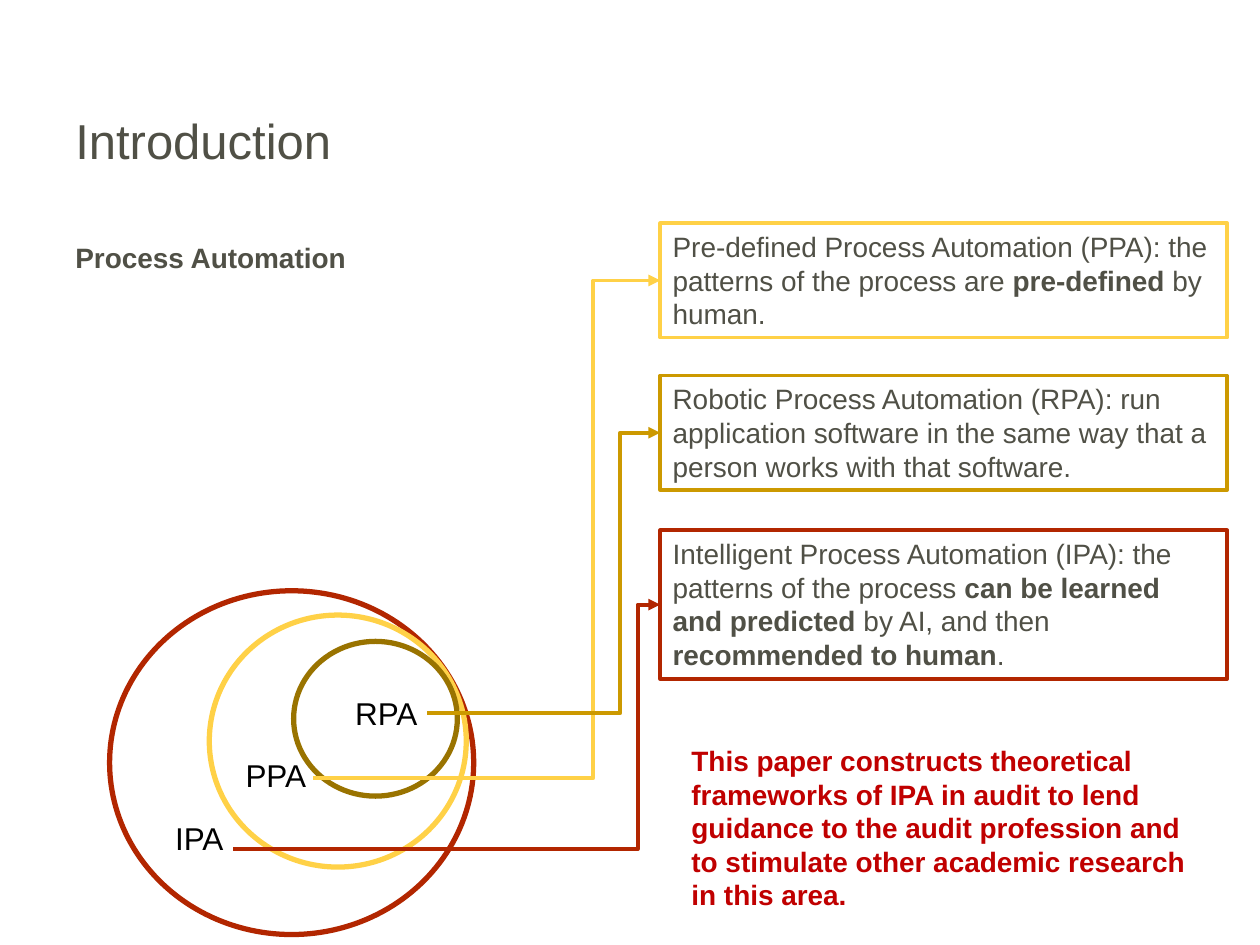
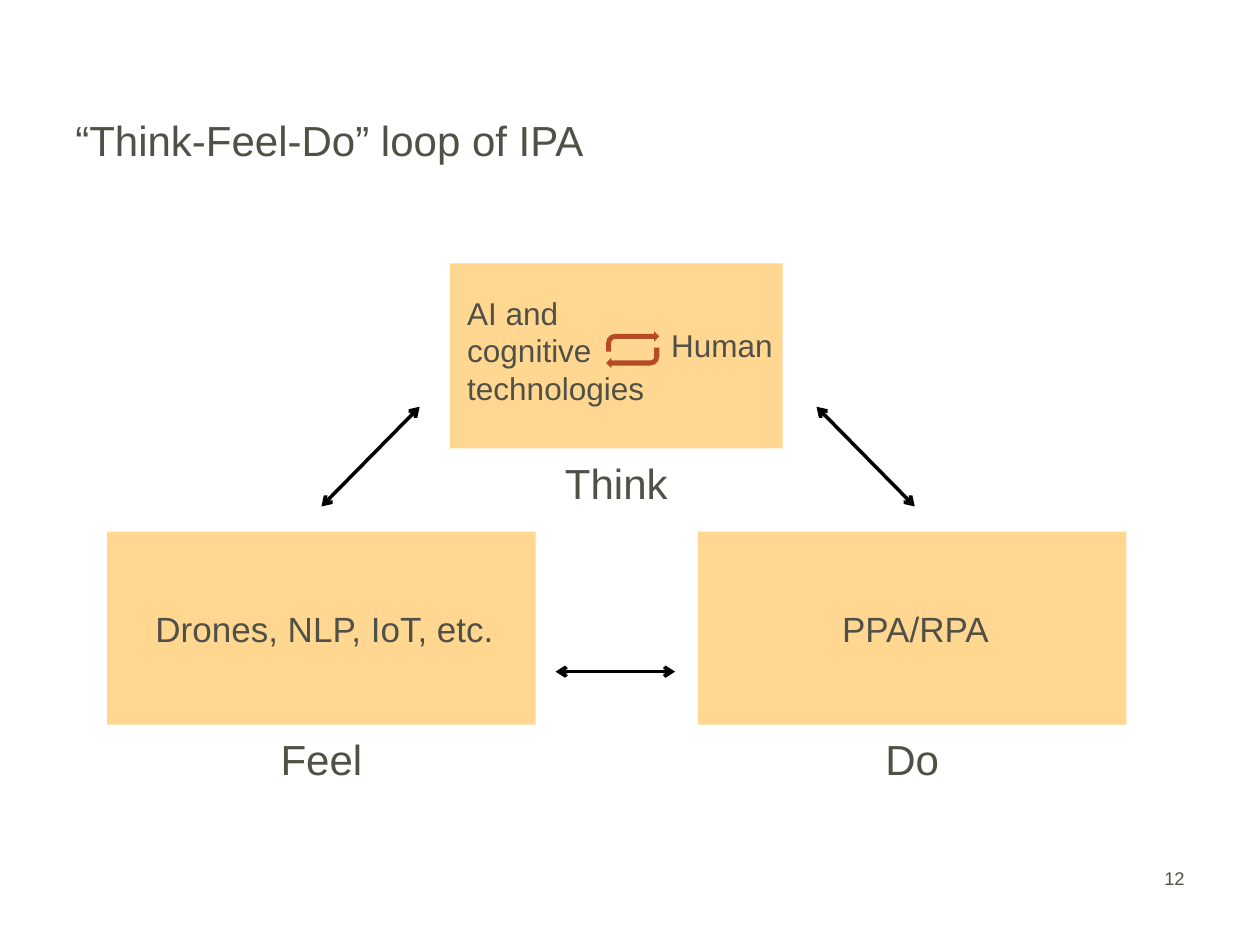
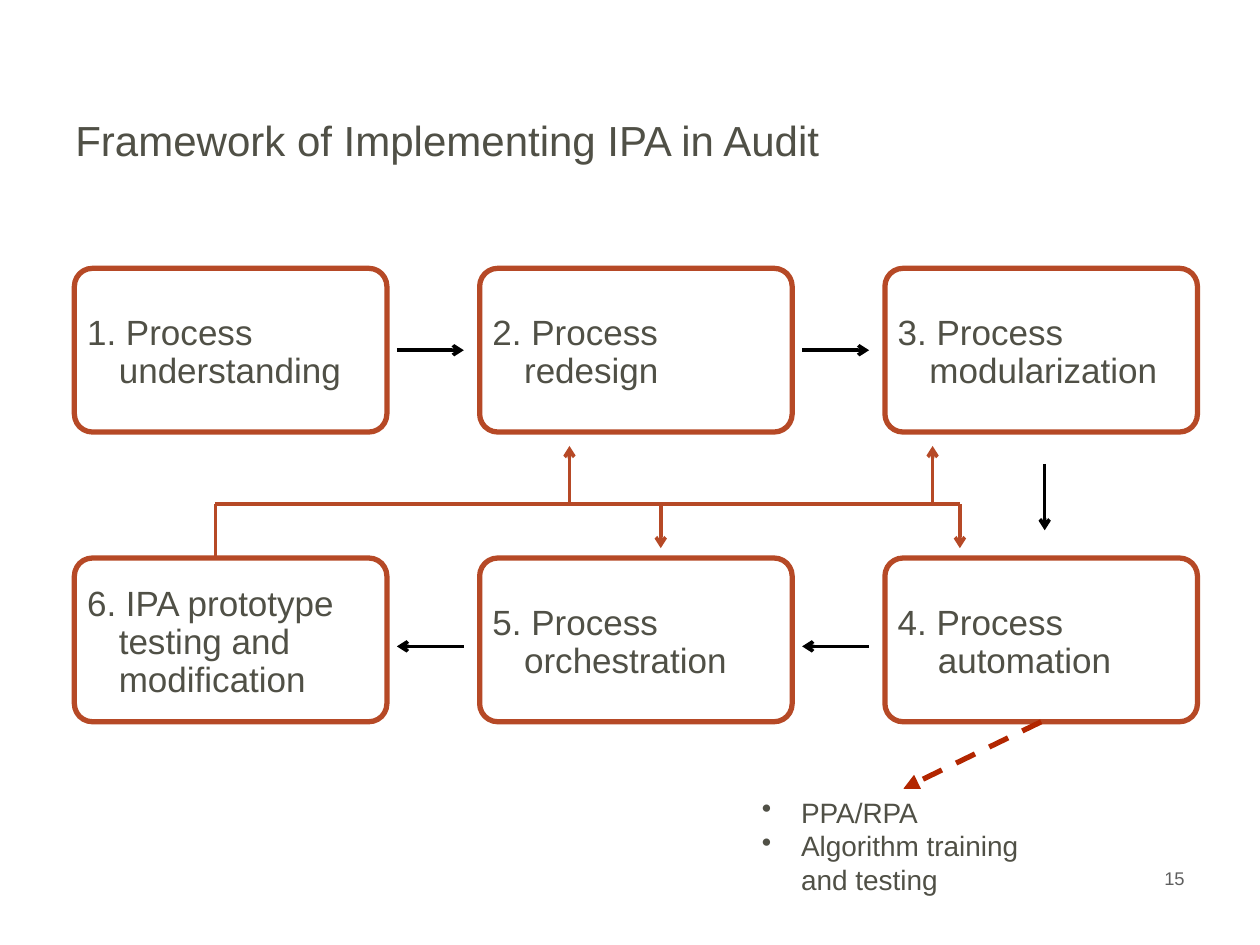
from dataclasses import dataclass

import pptx
import pptx.dml.color
import pptx.enum.dml
import pptx.enum.shapes
import pptx.enum.text
import pptx.oxml.ns
import pptx.util
from lxml import etree
from pptx.util import Cm

SHAPE = pptx.enum.shapes.MSO_SHAPE
CONNECTOR = pptx.enum.shapes.MSO_CONNECTOR
ALIGN = pptx.enum.text.PP_ALIGN
ANCHOR = pptx.enum.text.MSO_ANCHOR
qn = pptx.oxml.ns.qn


@dataclass(frozen=True)
class Theme:
    font: str = "Arial"
    ink: str = "505046"
    muted: str = "5F5F5F"
    black: str = "000000"
    white: str = "FFFFFF"
    yellow: str = "FFD147"
    gold: str = "CC9900"
    bronze: str = "997300"
    red: str = "B22600"
    alert: str = "C00000"
    sand: str = "FFD791"
    rust: str = "B64926"
    title_large: float = 28
    title: float = 24
    step: float = 20
    label: float = 18
    body: float = 16
    number: float = 10.5


THEME = Theme()


def rgb(color):
    return pptx.dml.color.RGBColor.from_string(color)


def write(box, text, size=THEME.body, color=THEME.ink, bold=False, align=ALIGN.LEFT,
          anchor=ANCHOR.TOP, insets=(0.25, 0.13, 0.25, 0.13), hanging=0, bullet="",
          spacing=None):
    """Fill box with one paragraph per line; **marks** switch bold on and off."""
    frame = box.text_frame
    frame.word_wrap = True
    frame.vertical_anchor = anchor
    (frame.margin_left, frame.margin_top,
     frame.margin_right, frame.margin_bottom) = map(Cm, insets)
    for index, line in enumerate(text.split("\n")):
        para = frame.paragraphs[0] if index == 0 else frame.add_paragraph()
        para.alignment = align
        if spacing:
            para.line_spacing = spacing
        properties = para._p.get_or_add_pPr()
        if hanging:
            properties.set("marL", str(Cm(hanging)))
            properties.set("indent", str(-Cm(hanging)))
        if bullet:
            etree.SubElement(properties, qn("a:buChar"), char=bullet)
        for part, words in enumerate(line.split("**")):
            span = para.add_run()
            span.text = words
            span.font.name = THEME.font
            span.font.size = pptx.util.Pt(size)
            span.font.bold = bold or part % 2 == 1
            span.font.color.rgb = rgb(color)


class Deck:
    """Holds the presentation and the slide being built; lengths are centimetres."""

    def __init__(self):
        self.file = pptx.Presentation()
        self.file.slide_width, self.file.slide_height = Cm(25.4), Cm(19.05)
        self.page = None

    def add_page(self, title, size=THEME.title, number=None, number_color=THEME.ink):
        self.page = self.file.slides.add_slide(self.file.slide_layouts[6])
        self.text(1.27, 1.7, 22.86, 2.24, title, size=size, anchor=ANCHOR.MIDDLE)
        if number:
            self.text(18.21, 17.35, 5.92, 1.32, number, size=THEME.number,
                      color=number_color, align=ALIGN.RIGHT)

    def text(self, left, top, width, height, words, **style):
        box = self.page.shapes.add_textbox(Cm(left), Cm(top), Cm(width), Cm(height))
        write(box, words, **style)

    def shape(self, kind, left, top, width, height, fill=None, line=None, weight=2):
        shape = self.page.shapes.add_shape(kind, Cm(left), Cm(top), Cm(width), Cm(height))
        shape.shadow.inherit = False
        if fill:
            shape.fill.solid()
            shape.fill.fore_color.rgb = rgb(fill)
        else:
            shape.fill.background()
        if line:
            shape.line.color.rgb = rgb(line)
            shape.line.width = pptx.util.Pt(weight)
        else:
            shape.line.fill.background()
        return shape

    def line(self, start, end, color=THEME.black, weight=2, head=None, tail=None,
             dash=None, kind=CONNECTOR.STRAIGHT):
        connector = self.page.shapes.add_connector(kind, *map(Cm, start + end))
        connector.line.color.rgb = rgb(color)
        connector.line.width = pptx.util.Pt(weight)
        if dash:
            connector.line.dash_style = dash
        outline = connector.line._get_or_add_ln()
        for tag, arrow in (("a:headEnd", head), ("a:tailEnd", tail)):
            if arrow:
                etree.SubElement(outline, qn(tag), type=arrow)
        etree.SubElement(connector._element.spPr, qn("a:effectLst"))
        return connector

    def elbow(self, start, turn, end, color):
        """Draw a bent arrow whose upright part stands at x = turn."""
        connector = self.line(start, end, color, 2.25, tail="triangle",
                              kind=CONNECTOR.ELBOW)
        share = (turn - start[0]) / (end[0] - start[0])
        geometry = connector._element.spPr.find(qn("a:prstGeom"))
        guides = geometry.find(qn("a:avLst"))
        if guides is None:
            guides = etree.SubElement(geometry, qn("a:avLst"))
        etree.SubElement(guides, qn("a:gd"), name="adj1", fmla=f"val {round(share * 100000)}")
        return connector


def build_introduction(deck):
    deck.add_page("Introduction", THEME.title_large)
    box_left, box_width = 13.31, 11.43
    definitions = (
        (4.5, 2.31, THEME.yellow, "Pre-defined Process Automation (PPA): the patterns of "
         "the process are **pre-defined **by human."),
        (7.57, 2.31, THEME.gold, "Robotic Process Automation (RPA): run application "
         "software in the same way that a person works with that software."),
        (10.69, 3, THEME.red, "Intelligent Process Automation (IPA): the patterns of the "
         "process **can be learned and predicted **by AI, and then "
         "**recommended to human**."),
    )
    for top, height, color, words in definitions:
        box = deck.shape(SHAPE.RECTANGLE, box_left, top, box_width, height,
                         THEME.white, color)
        write(box, words)

    for color, *place in ((THEME.red, 2.21, 11.91, 7.34, 6.93),
                          (THEME.yellow, 4.22, 12.4, 5.18, 5.08),
                          (THEME.bronze, 5.92, 12.93, 3.3, 3.12)):
        deck.shape(SHAPE.OVAL, *place, line=color, weight=3)
    for name, left, top in (("IPA", 3.28, 16.38), ("PPA", 4.7, 15.11), ("RPA", 6.91, 13.87)):
        deck.text(left, top, 2, 1.02, name, size=THEME.label, color=THEME.black)

    routes = (((6.32, 15.69), 11.96), ((8.61, 14.38), 12.5), ((4.7, 17.12), 12.85))
    for (start, turn), (top, height, color, _) in zip(routes, definitions):
        deck.elbow(start, turn, (box_left, top + height / 2), color)

    deck.text(13.69, 14.86, 10.9, 3.66, "This paper constructs theoretical frameworks of "
              "IPA in audit to lend guidance to the audit profession and to stimulate "
              "other academic research in this area.", color=THEME.alert, bold=True)
    deck.text(1.27, 4.72, 5.99, 0.94, "Process Automation", bold=True)


def build_loop(deck):
    deck.add_page("“Think-Feel-Do” loop of IPA", number="12")
    for caption, words, left, top, width, height in (
            ("Think", "", 9.07, 5.31, 6.71, 3.73),
            ("Feel", "Drones, NLP, IoT, etc.", 2.16, 10.72, 8.64, 3.89),
            ("Do", "PPA/RPA", 14.07, 10.72, 8.64, 3.89)):
        box = deck.shape(SHAPE.RECTANGLE, left, top, width, height, THEME.sand)
        if words:
            write(box, words, size=THEME.step, align=ALIGN.CENTER, anchor=ANCHOR.MIDDLE,
                  insets=(0.38, 0.13, 0.25, 0.13))
        deck.text(left, top + height + 0.05, width, 1.27, caption,
                  size=THEME.title, align=ALIGN.CENTER)
    deck.text(9.17, 5.79, 4.09, 2.57, "AI and cognitive technologies", size=THEME.label)
    deck.text(13.28, 6.45, 2.95, 1.02, "Human", size=THEME.label)
    for top, turn in ((6.68, 0), (7.01, 180)):
        deck.shape(SHAPE.BENT_ARROW, 12.22, top, 1.07, 0.41, THEME.rust).rotation = turn
    for start, end in (((16.46, 8.2), (18.44, 10.21)),
                       ((8.46, 8.2), (6.48, 10.21)),
                       ((11.2, 13.54), (13.61, 13.54))):
        deck.line(start, end, head="arrow", tail="arrow")


def build_framework(deck):
    deck.add_page("Framework of Implementing IPA in Audit", number="15",
                  number_color=THEME.muted)
    left, pitch, width, height = 1.5, 8.17, 6.3, 3.3
    top_row, bottom_row = 5.41, 11.25
    steps = (
        ("1. Process understanding", 0, top_row), ("2. Process redesign", 1, top_row),
        ("3. Process modularization", 2, top_row), ("4. Process automation", 2, bottom_row),
        ("5. Process orchestration", 1, bottom_row),
        ("6. IPA prototype testing and modification", 0, bottom_row),
    )
    boxes = {}
    for words, column, top in steps:
        box = deck.shape(SHAPE.ROUNDED_RECTANGLE, left + column * pitch, top, width, height,
                         THEME.white, THEME.rust, 3)
        box.adjustments[0] = 0.11
        automation = words.startswith("4")
        write(box, words, size=THEME.step, anchor=ANCHOR.MIDDLE, spacing=0.9,
              hanging=0.81 if automation else 0.64, insets=(0.15, 0.28, 0.03, 0.15))
        boxes[words[0]] = box

    for column in range(2):
        near = 8 + column * pitch
        far = near + 1.35
        deck.line((near, 7.06), (far, 7.06), tail="arrow")
        deck.line((far, 13.03), (near, 13.03), tail="arrow")
    deck.line((21.06, 9.35), (21.06, 10.69), tail="arrow")

    trunk, bus, bus_end = 4.34, 10.16, 19.35
    deck.line((trunk, bottom_row), (trunk, bus), THEME.rust)
    deck.line((trunk, bus), (bus_end, bus), THEME.rust)
    for x, tip in ((11.48, 8.99), (13.32, 11.05), (18.8, 8.99), (bus_end, 11.05)):
        deck.line((x, bus), (x, tip), THEME.rust, tail="arrow")

    deck.text(15.11, 15.9, 6.17, 2.31, "PPA/RPA\nAlgorithm training and testing",
              hanging=0.79, bullet="•")
    detail = deck.line((20.99, bottom_row + height), (18.21, 15.9), THEME.red, 3,
                       tail="triangle", dash=pptx.enum.dml.MSO_LINE.DASH)
    detail.begin_connect(boxes["4"], 2)


def main():
    deck = Deck()
    build_introduction(deck)
    build_loop(deck)
    build_framework(deck)
    deck.file.save("out.pptx")


if __name__ == "__main__":
    main()
